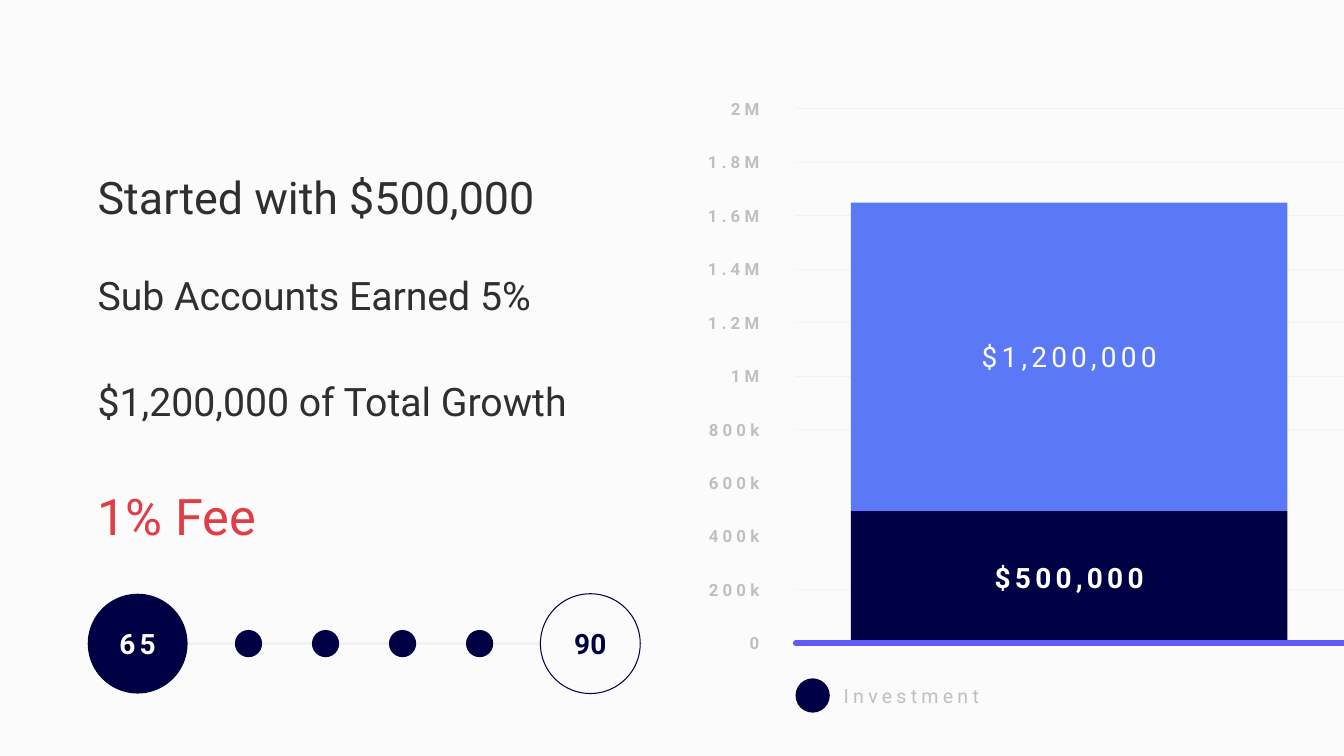
from lxml import etree
from pptx import Presentation
from pptx import util as u
from pptx.dml import color
from pptx.enum import shapes, text
from pptx.oxml import ns

FONT = "Roboto"
HUES = {
    "back": "FBFBFB", "grid": "F2F2F2", "mute": "BFBFBF", "ink": "2F2F30",
    "red": "E13D45", "navy": "000044", "blue": "5B79F6", "axis": "645AFA",
    "white": "FFFFFF",
}
LEFT, MID, RIGHT = text.PP_ALIGN.LEFT, text.PP_ALIGN.CENTER, text.PP_ALIGN.RIGHT
RECT, OVAL = shapes.MSO_SHAPE.RECTANGLE, shapes.MSO_SHAPE.OVAL


def rgb(name):
    return color.RGBColor.from_string(HUES[name])


def write(shape, words, size=20, hue="white", bold=False, gap=0,
          align=MID, anchor=text.MSO_ANCHOR.MIDDLE, wrap=True):
    """Put one formatted line into a shape; gap is letter spacing in points."""
    frame = shape.text_frame
    frame.word_wrap = wrap
    frame.vertical_anchor = anchor
    para = frame.paragraphs[0]
    para.alignment = align
    run = para.add_run()
    run.text = words
    font = run.font
    font.name, font.size, font.bold = FONT, u.Pt(size), bold
    font.color.rgb = rgb(hue)
    if gap:
        run._r.get_or_add_rPr().set("spc", str(gap * 100))


def label(parts, box, words, **style):
    write(parts.add_textbox(*map(u.Inches, box)), words, **style)


def block(parts, kind, box, fill, edge=None):
    shape = parts.add_shape(kind, *map(u.Inches, box))
    shape.shadow.inherit = False
    shape.fill.solid()
    shape.fill.fore_color.rgb = rgb(fill)
    if edge:
        shape.line.color.rgb = rgb(edge)
        shape.line.width = u.Pt(0)
    else:
        shape.line.fill.background()
    return shape


def rule(parts, x1, x2, y, hue, width, cap=None):
    """Draw a level line."""
    ends = map(u.Inches, (x1, y, x2, y))
    line = parts.add_connector(shapes.MSO_CONNECTOR.STRAIGHT, *ends)
    line.line.color.rgb = rgb(hue)
    line.line.width = u.Pt(width)
    props = line._element.spPr
    if cap:
        props.find(ns.qn("a:ln")).set("cap", cap)
    etree.SubElement(props, ns.qn("a:effectLst"))


def facts(parts, left, top):
    rows = [  # offset, height, size, hue, words
        (0, 0.64, 32, "ink", "Started with $500,000"),
        (1.01, 0.57, 28, "ink", "Sub Accounts Earned 5%"),
        (2.06, 0.57, 28, "ink", "$1,200,000 of Total Growth"),
        (3.13, 0.71, 36, "red", "1% Fee"),
    ]
    for down, high, size, hue, words in rows:
        label(parts, (left, top + down, 5.88, high), words, size=size,
              hue=hue, align=LEFT, anchor=text.MSO_ANCHOR.TOP)


def ages(parts, left, top, width, size):
    """Timeline from the first age to the last."""
    mid, end = top + size / 2, left + width - size
    rule(parts, left + size, end, mid, "grid", 2)
    first = block(parts, OVAL, (left, top, size, size), "navy")
    write(first, "65", bold=True, gap=3)
    last = block(parts, OVAL, (end, top, size, size), "back", "navy")
    write(last, "90", hue="navy", bold=True)
    # Dots between the ages
    dots = parts.add_group_shape().shapes
    dot, step = 0.27, 0.764
    for i in range(4):
        x = left + 1.46 + i * step
        block(dots, OVAL, (x, mid - dot / 2, dot, dot), "navy")


def graph(parts, left, top, width, height):
    """Stacked bar on a scale; the box is the plot area."""
    ticks = ["0", "200k", "400k", "600k", "800k", "1M",
             "1.2M", "1.4M", "1.6M", "1.8M", "2M"]
    base, step = top + height, height / (len(ticks) - 1)
    # Scale and grid
    for i, tick in enumerate(ticks):
        y = base - i * step
        if tick not in ("0", "400k", "600k"):
            rule(parts, left, left + width, y, "grid", 0.5)
        label(parts, (left - 1.04, y - 0.15, 0.78, 0.3), tick, size=12,
              hue="mute", bold=True, gap=3, align=RIGHT, wrap=False)
    # Bar, from the bottom up
    y = base + 0.01
    for high, hue, words, bold in [(1.32, "navy", "$500,000", True),
                                   (3.06, "blue", "$1,200,000", False)]:
        y -= high
        bar = block(parts, RECT, (left + 0.55, y, 4.33, high), hue)
        write(bar, words, bold=bold, gap=3)
    rule(parts, left + width, left, base, "axis", 3.75, "rnd")


def legend(parts, left, top, size):
    key = parts.add_group_shape().shapes
    label(key, (left + size + 0.04, top, 2.07, size), "Investment", size=14,
          hue="mute", gap=3, align=LEFT)
    block(key, OVAL, (left, top, size, size), "navy")


def main():
    deck = Presentation()
    deck.slide_width, deck.slide_height = u.Inches(13.33), u.Inches(7.5)
    slide = deck.slides.add_slide(deck.slide_layouts[6])
    slide.background.fill.solid()
    slide.background.fill.fore_color.rgb = rgb("back")
    parts = slide.shapes
    graph(parts, 7.89, 1.08, 5.44, 5.3)
    legend(parts, 7.89, 6.73, 0.34)
    facts(parts, 0.87, 1.63)
    ages(parts, 0.87, 5.89, 5.48, 0.99)
    deck.save("out.pptx")


if __name__ == "__main__":
    main()
